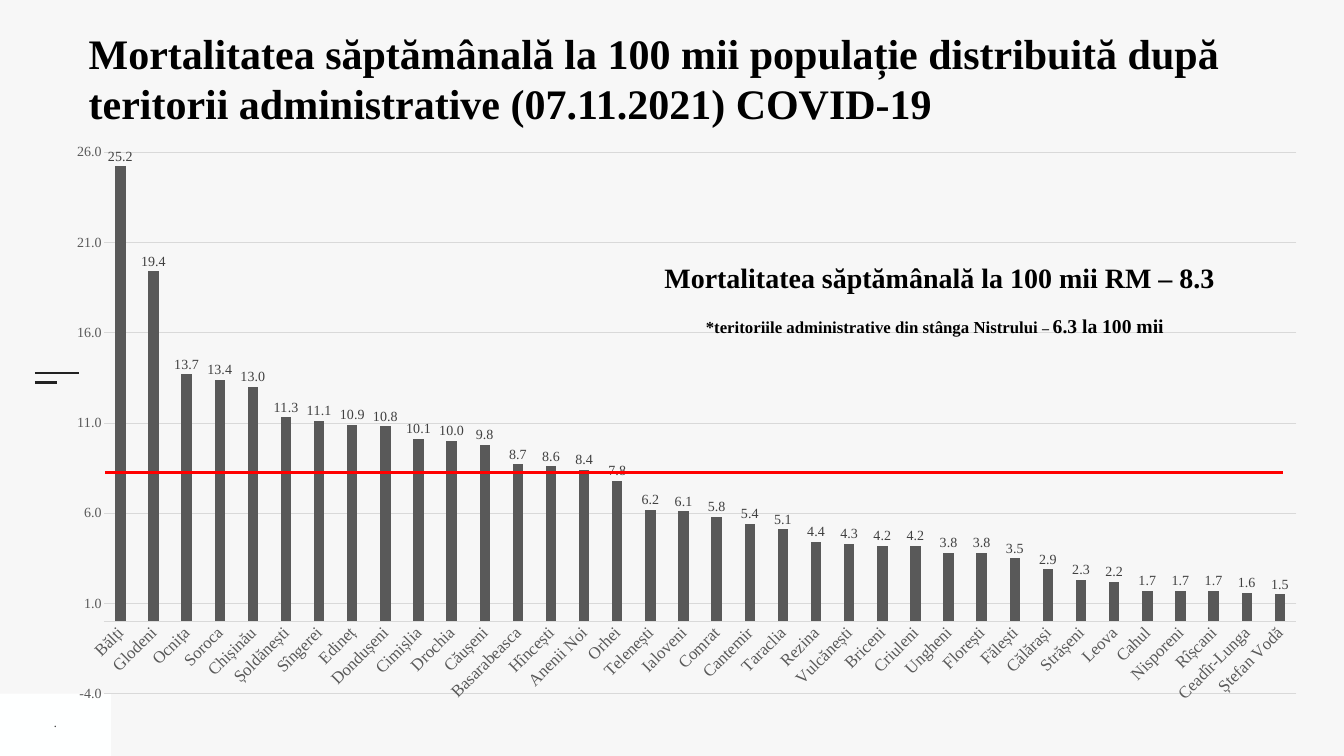
from dataclasses import dataclass

from pptx import Presentation
from pptx.chart.axis import _BaseAxis as Axis
from pptx.chart.chart import Chart
from pptx.chart.data import CategoryChartData
from pptx.dml.color import RGBColor
from pptx.enum.chart import XL_CHART_TYPE as ChartType
from pptx.enum.chart import XL_LABEL_POSITION as LabelPosition
from pptx.enum.chart import XL_TICK_MARK as TickMark
from pptx.enum.shapes import MSO_CONNECTOR as Connector
from pptx.enum.shapes import MSO_SHAPE as ShapeKind
from pptx.enum.text import MSO_ANCHOR as Anchor
from pptx.enum.text import MSO_AUTO_SIZE as AutoSize
from pptx.enum.text import PP_ALIGN as Align
from pptx.oxml import parse_xml
from pptx.oxml.ns import nsdecls
from pptx.shapes.autoshape import Shape
from pptx.slide import Slide
from pptx.text.text import Font
from pptx.util import Pt

BACKGROUND = RGBColor(0xF7, 0xF7, 0xF7)
CORNER = RGBColor(0xFE, 0xFF, 0xFF)
INK = RGBColor(0x22, 0x22, 0x22)
BLACK = RGBColor(0x00, 0x00, 0x00)
RED = RGBColor(0xFF, 0x00, 0x00)
GREY = RGBColor(0x59, 0x59, 0x59)
LABEL_GREY = RGBColor(0x40, 0x40, 0x40)
GRID = RGBColor(0xD9, 0xD9, 0xD9)
SERIF = "Times New Roman"
SANS = "Open Sans"

MORTALITY = {
    "Bălți": 25.2, "Glodeni": 19.4, "Ocnița": 13.7, "Soroca": 13.4,
    "Chișinău": 13.0, "Șoldănești": 11.3, "Sîngerei": 11.1, "Edineț": 10.9,
    "Dondușeni": 10.8, "Cimișlia": 10.1, "Drochia": 10.0, "Căușeni": 9.8,
    "Basarabeasca": 8.7, "Hîncești": 8.6, "Anenii Noi": 8.4, "Orhei": 7.8,
    "Telenești": 6.2, "Ialoveni": 6.1, "Comrat": 5.8, "Cantemir": 5.4,
    "Taraclia": 5.1, "Rezina": 4.4, "Vulcănești": 4.3, "Briceni": 4.2,
    "Criuleni": 4.2, "Ungheni": 3.8, "Florești": 3.8, "Fălești": 3.5,
    "Călărași": 2.9, "Strășeni": 2.3, "Leova": 2.2, "Cahul": 1.7,
    "Nisporeni": 1.7, "Rîșcani": 1.7, "Ceadîr-Lunga": 1.6, "Ștefan Vodă": 1.5,
}
PLOT_AREA = {"x": 0.066, "y": 0.034, "w": 0.919, "h": 0.898}


@dataclass(frozen=True)
class Rule:
    left: float
    right: float
    top: float
    color: RGBColor
    width: float


@dataclass(frozen=True)
class Span:
    text: str
    size: float
    bold: bool = True
    font: str = SERIF
    color: RGBColor = BLACK


@dataclass(frozen=True)
class Note:
    left: float
    top: float
    width: float
    height: float
    spans: tuple[Span, ...]
    wrap: bool = False


MENU_RULES = (
    Rule(49.7, 113, 533.5, INK, 3),
    Rule(49.7, 81.4, 546.5, INK, 3),
)
AVERAGE_RULE = Rule(150.5, 1833, 674.6, RED, 4.5)
TITLE = Span(
    "Mortalitatea săptămânală la 100 mii populație distribuită după "
    "teritorii administrative (07.11.2021) COVID-19", 60)
PAGE_MARK = Note(69.8, 1016, 18.7, 34, (Span(".", 16, False, SANS, INK),))
NOTES = (
    Note(937.4, 368.6, 809.3, 55.4,
         (Span("Mortalitatea săptămânală la 100 mii RM – 8.3", 40),)),
    Note(855.4, 445, 959.8, 41,
         (Span("*teritoriile administrative din stânga Nistrului ", 24),
          Span("– ", 20), Span("6.3 la 100 mii", 28)), True),
)


def style_font(font: Font, size: float, color: RGBColor,
               name: str = SERIF, bold: bool = False) -> None:
    font.size = Pt(size)
    font.name = name
    font.bold = bold
    font.color.rgb = color


def draw_rule(page: Slide, rule: Rule) -> None:
    line = page.shapes.add_connector(
        Connector.STRAIGHT, Pt(rule.left), Pt(rule.top), Pt(rule.right), Pt(rule.top))
    line.line.color.rgb = rule.color
    line.line.width = Pt(rule.width)
    properties = line.element.xpath("./p:spPr")[0]
    properties.append(parse_xml(f"<a:effectLst {nsdecls('a')}/>"))


def draw_note(page: Slide, note: Note) -> Shape:
    box = page.shapes.add_textbox(
        Pt(note.left), Pt(note.top), Pt(note.width), Pt(note.height))
    box.text_frame.word_wrap = note.wrap
    para = box.text_frame.paragraphs[0]
    para.alignment = Align.CENTER
    for span in note.spans:
        run = para.add_run()
        run.text = span.text
        style_font(run.font, span.size, span.color, span.font, span.bold)
    return box


def draw_page_mark(page: Slide) -> None:
    frame = draw_note(page, PAGE_MARK).text_frame
    frame.vertical_anchor = Anchor.MIDDLE
    frame.margin_left = frame.margin_right = Pt(7.2)
    frame.margin_top = frame.margin_bottom = Pt(7.2)


def draw_corner(page: Slide) -> None:
    corner = page.shapes.add_shape(
        ShapeKind.RECTANGLE, Pt(0), Pt(991), Pt(158.4), Pt(89))
    corner.shadow.inherit = False
    corner.fill.solid()
    corner.fill.fore_color.rgb = CORNER
    corner.line.fill.background()


def set_title(title: Shape) -> None:
    title.left, title.top = Pt(119.5), Pt(35.3)
    title.width, title.height = Pt(1675.4), Pt(152.6)
    frame = title.text_frame
    frame.text = TITLE.text
    frame.word_wrap = True
    frame.auto_size = AutoSize.NONE
    frame.vertical_anchor = Anchor.TOP
    para = frame.paragraphs[0]
    para.alignment = Align.LEFT
    style_font(para.runs[0].font, TITLE.size, TITLE.color, TITLE.font, TITLE.bold)


def style_axis(axis: Axis, size: float) -> None:
    axis.major_tick_mark = axis.minor_tick_mark = TickMark.NONE
    style_font(axis.tick_labels.font, size, GREY)


def place_plot(chart: Chart) -> None:
    plot_area = chart.element.xpath("./c:chart/c:plotArea")[0]
    for layout in plot_area.xpath("./c:layout"):
        plot_area.remove(layout)
    modes = "".join(f'<c:{side}Mode val="edge"/>' for side in "xy")
    sizes = "".join(f'<c:{side} val="{value}"/>' for side, value in PLOT_AREA.items())
    plot_area.insert(0, parse_xml(
        f'<c:layout {nsdecls("c")}><c:manualLayout><c:layoutTarget val="inner"/>'
        f"{modes}{sizes}</c:manualLayout></c:layout>"))


def draw_chart(page: Slide) -> None:
    data = CategoryChartData(number_format="0.0")
    data.categories = list(MORTALITY)
    data.add_series("Series 1", list(MORTALITY.values()))
    chart = page.shapes.add_chart(
        ChartType.COLUMN_CLUSTERED, Pt(25.9), Pt(187.9), Pt(1854), Pt(861.8), data).chart
    chart.has_title = False
    chart.has_legend = False
    style_font(chart.font, 24, BLACK)

    regions, rates = chart.category_axis, chart.value_axis
    style_axis(regions, 24)
    regions.format.line.color.rgb = GRID
    regions.format.line.width = Pt(0.75)
    for body in chart.element.xpath(".//c:catAx/c:txPr/a:bodyPr"):
        body.set("rot", "-2700000")
        body.set("vert", "horz")
    style_axis(rates, 20)
    rates.minimum_scale, rates.maximum_scale, rates.major_unit = -4, 26, 5
    rates.tick_labels.number_format = "0.0"
    rates.tick_labels.number_format_is_linked = False
    rates.format.line.fill.background()
    rates.major_gridlines.format.line.color.rgb = GRID
    rates.major_gridlines.format.line.width = Pt(0.75)

    plot = chart.plots[0]
    plot.vary_by_categories = False
    plot.gap_width, plot.overlap = 219, -27
    columns = plot.series[0]
    columns.format.fill.solid()
    columns.format.fill.fore_color.rgb = GREY
    labels = columns.data_labels
    labels.show_value = True
    labels.position = LabelPosition.OUTSIDE_END
    labels.number_format = "0.0"
    labels.number_format_is_linked = False
    style_font(labels.font, 20, LABEL_GREY)
    place_plot(chart)


def main() -> None:
    deck = Presentation()
    deck.slide_width, deck.slide_height = Pt(1920), Pt(1080)
    page = deck.slides.add_slide(deck.slide_layouts.get_by_name("Title Only"))
    page.background.fill.solid()
    page.background.fill.fore_color.rgb = BACKGROUND
    set_title(page.shapes.title)
    draw_corner(page)
    for rule in MENU_RULES:
        draw_rule(page, rule)
    draw_chart(page)
    draw_rule(page, AVERAGE_RULE)
    draw_page_mark(page)
    for note in NOTES:
        draw_note(page, note)
    deck.save("out.pptx")


if __name__ == "__main__":
    main()
